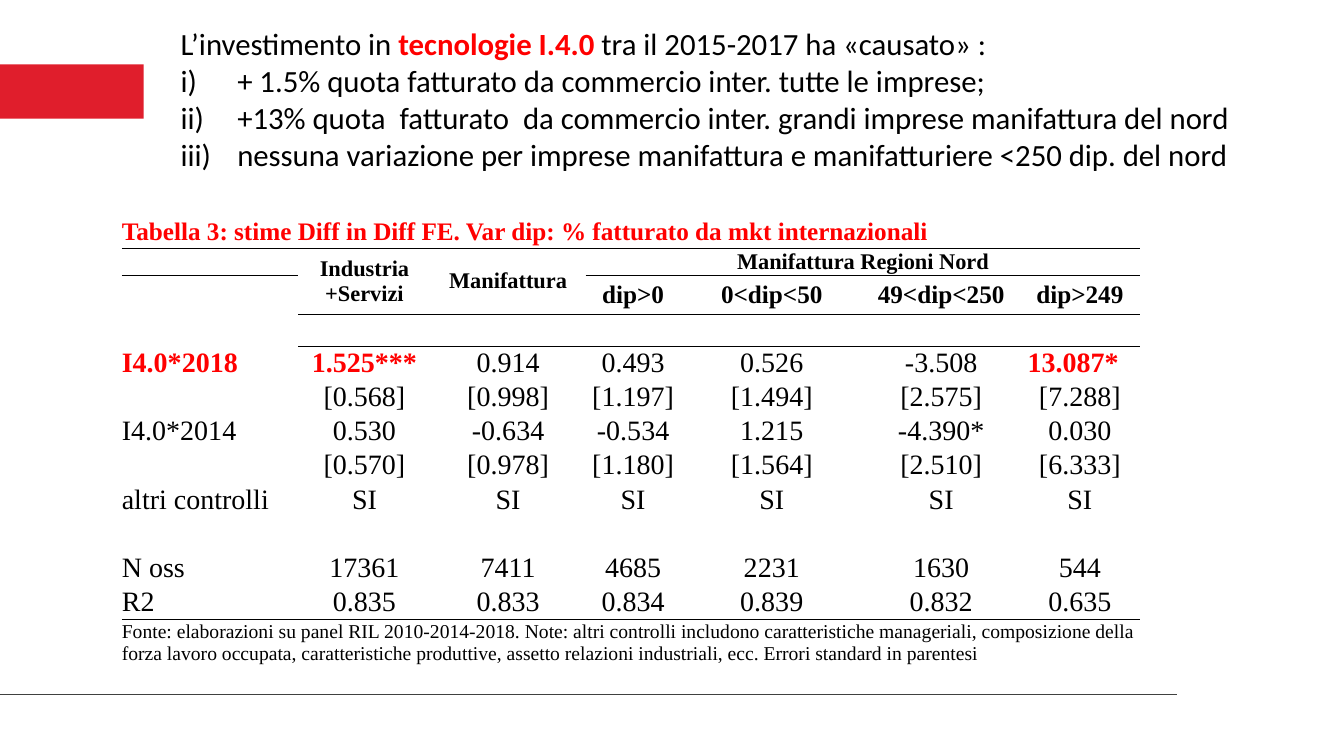
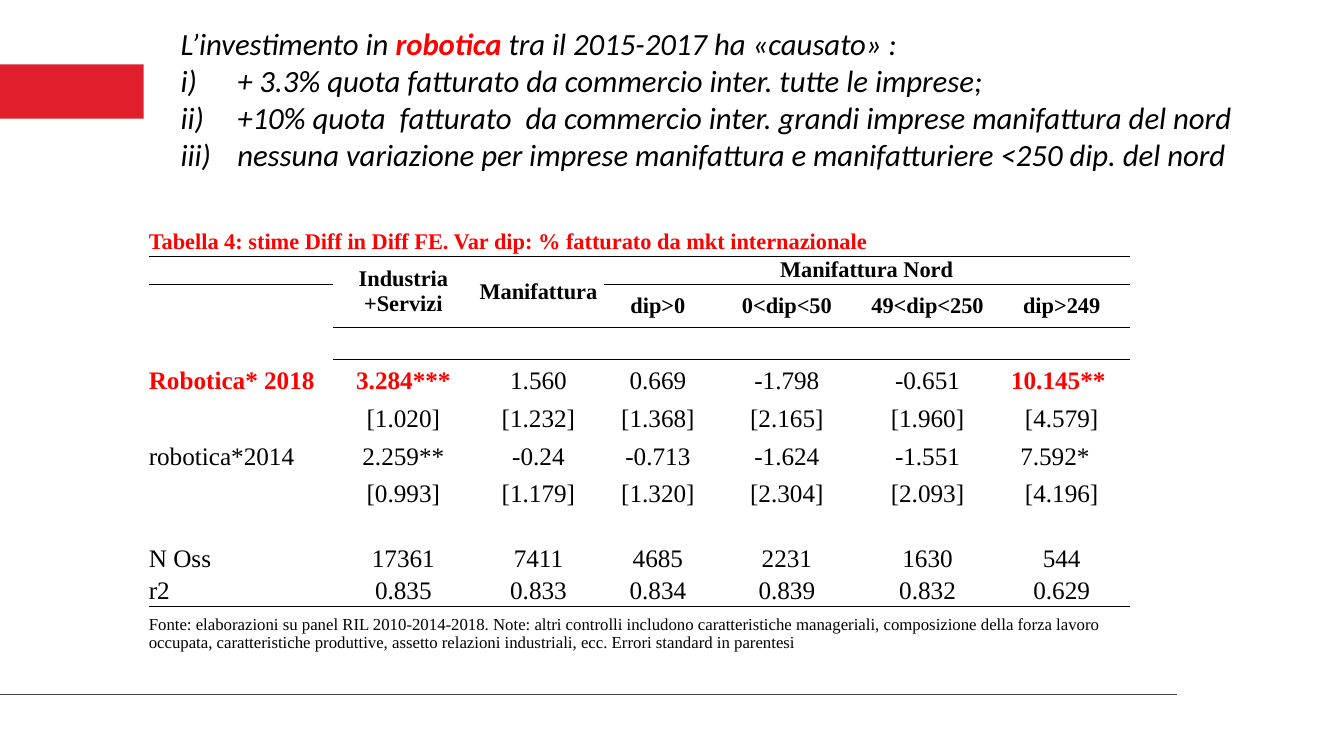
"""Builds two slides of Diff in Diff estimates on I.4.0 technologies and robotics."""
import lxml.etree
import pptx
import pptx.dml.color
import pptx.enum.shapes
import pptx.enum.text
import pptx.oxml.ns
import pptx.util

Cm, Pt, qn = pptx.util.Cm, pptx.util.Pt, pptx.oxml.ns.qn
ALIGN = pptx.enum.text.PP_ALIGN

NO_TABLE_STYLE = "{2D5ABB26-0587-4C30-8999-92F81FD0307C}"
SIZE_HEADERS = ["dip>0", "0<dip<50", "49<dip<250", "dip>249"]
OBSERVATIONS = ["17361", "7411", "4685", "2231", "1630", "544"]
CONTROLS = ["altri controlli"] + ["SI"] * 6
BLANK = [""] * 7
NOTE = ("Fonte: elaborazioni su panel RIL 2010-2014-2018. Note: altri controlli includono "
        "caratteristiche manageriali, composizione della forza lavoro occupata, caratteristiche "
        "produttive, assetto relazioni industriali, ecc. Errori standard in parentesi")


def colour(hex_string):
    """Return the colour object for a hex string."""
    return pptx.dml.color.RGBColor.from_string(hex_string)


def add_text(para, text, font, size, ink="000000", bold=False, italic=False):
    """Append one formatted span of text to a paragraph."""
    span = para.add_run()
    span.text = text
    span.font.name = font
    span.font.size = Pt(size)
    span.font.color.rgb = colour(ink)
    span.font.bold = bold
    span.font.italic = italic


class Report:
    """Holds the deck, its style and the current page."""

    BAND, LINE, ACCENT, INK = "E01E2C", "404140", "FF0000", "000000"
    HEADING_FONT, TABLE_FONT = "Calibri", "Times New Roman"
    HEADING_SIZE = 22

    def __init__(self):
        """Start an empty wide deck."""
        self.deck = pptx.Presentation()
        self.deck.slide_width = Cm(33.87)
        self.deck.slide_height = Cm(19.05)
        self.page = None

    def new_page(self):
        """Add a page with the red band and the bottom line."""
        self.page = self.deck.slides.add_slide(self.deck.slide_layouts[6])
        band = self.page.shapes.add_shape(
            pptx.enum.shapes.MSO_SHAPE.RECTANGLE, 0, Cm(1.62), Cm(3.62), Cm(1.37))
        band.shadow.inherit = False
        band.fill.solid()
        band.fill.fore_color.rgb = colour(self.BAND)
        band.line.fill.background()
        line = self.page.shapes.add_connector(
            pptx.enum.shapes.MSO_CONNECTOR.STRAIGHT, 0, Cm(17.5), Cm(29.65), Cm(17.5))
        line.line.color.rgb = colour(self.LINE)
        line.line.width = Pt(1)
        lxml.etree.SubElement(line._element.spPr, qn("a:effectLst"))

    def findings(self, technology, all_firms, large_firms, italic=False):
        """Write the lead sentence and its numbered findings."""
        box = self.page.shapes.add_textbox(Cm(4.3), Cm(0.5), Cm(27.28), Cm(4.02))
        frame = box.text_frame
        frame.word_wrap = True
        frame.auto_size = pptx.enum.text.MSO_AUTO_SIZE.SHAPE_TO_FIT_TEXT
        style = dict(font=self.HEADING_FONT, size=self.HEADING_SIZE, italic=italic)
        para = frame.paragraphs[0]
        para.alignment = ALIGN.JUSTIFY
        add_text(para, "L’investimento in ", **style)
        add_text(para, technology + " ", ink=self.ACCENT, bold=True, **style)
        add_text(para, "tra il 2015-2017 ha «causato» :", **style)
        for finding in (
                f"{all_firms} quota fatturato da commercio inter. tutte le imprese;",
                f"{large_firms} quota  fatturato  da commercio inter. grandi imprese "
                "manifattura del nord",
                "nessuna variazione per imprese manifattura e manifatturiere <250 dip. del nord"):
            para = frame.add_paragraph()
            para.alignment = ALIGN.JUSTIFY
            properties = para._p.get_or_add_pPr()
            properties.set("marL", str(Cm(1.43)))
            properties.set("indent", str(-Cm(1.43)))
            lxml.etree.SubElement(properties, qn("a:buAutoNum"), type="romanLcParenR")
            add_text(para, finding, **style)

    def fill_cell(self, cell, text, size, align=ALIGN.CENTER, **style):
        """Write one table cell."""
        para = cell.text_frame.paragraphs[0]
        para.alignment = align
        add_text(para, text, self.TABLE_FONT, size, **style)

    def rule(self, table, row, first_column=0):
        """Draw a thin line under a table row."""
        for column in range(first_column, len(table.columns)):
            for tag, line_row in (("a:lnB", row), ("a:lnT", row + 1)):
                properties = table.cell(line_row, column)._tc.get_or_add_tcPr()
                border = lxml.etree.SubElement(properties, qn(tag), w=str(Pt(0.5)))
                fill = lxml.etree.SubElement(border, qn("a:solidFill"))
                lxml.etree.SubElement(fill, qn("a:srgbClr"), val=self.INK)

    def estimates(self, left, top, widths, heights, caption, region, body, sizes):
        """Add a table of estimates with caption, headers and source note."""
        caption_size, header_size, class_size, body_size, note_size = sizes
        row_count, column_count = len(heights), len(widths)
        last = column_count - 1
        table = self.page.shapes.add_table(
            row_count, column_count, Cm(left), Cm(top),
            Cm(sum(widths)), Cm(sum(heights))).table
        table.first_row = table.horz_banding = False
        table._tbl.tblPr.find(qn("a:tableStyleId")).text = NO_TABLE_STYLE
        for column, width in zip(table.columns, widths):
            column.width = Cm(width)
        for row, height in zip(table.rows, heights):
            row.height = Cm(height)

        for row, first_column in ((0, 0), (1, 3), (2, 1), (row_count - 2, 0)):
            self.rule(table, row, first_column)
        for cell in table.iter_cells():
            cell.fill.background()
            cell.margin_left = cell.margin_right = cell.margin_top = cell.margin_bottom = 0
            cell.vertical_anchor = pptx.enum.text.MSO_ANCHOR.MIDDLE
            lxml.etree.SubElement(cell.text_frame.paragraphs[0]._p, qn("a:endParaRPr"), sz="1200")
        for start, end in (((0, 0), (0, last)), ((1, 1), (2, 1)), ((1, 2), (2, 2)),
                           ((1, 3), (1, last)), ((row_count - 1, 0), (row_count - 1, last))):
            table.cell(*start).merge(table.cell(*end))

        self.fill_cell(table.cell(0, 0), caption, caption_size, ALIGN.LEFT,
                       ink=self.ACCENT, bold=True)
        for column, header in enumerate(["Industria +Servizi", "Manifattura", region], 1):
            self.fill_cell(table.cell(1, column), header, header_size, bold=True)
        for column, header in enumerate(SIZE_HEADERS, 3):
            self.fill_cell(table.cell(2, column), header, class_size, bold=True)
        for row, values in enumerate(body, 4):
            for column, value in enumerate(values):
                if not value:
                    continue
                cell = table.cell(row, column)
                marked = row == 4 and column in (0, 1, last)
                stars = value.count("*")
                if column == last and stars:
                    cell.margin_right = Cm(0.17 * (3 - stars))
                self.fill_cell(cell, value, body_size, ALIGN.CENTER if column else ALIGN.LEFT,
                               ink=self.ACCENT if marked else self.INK, bold=marked)
        self.fill_cell(table.cell(row_count - 1, 0), NOTE, note_size, ALIGN.LEFT)


def main():
    """Build and save the deck."""
    report = Report()

    report.new_page()
    report.findings("tecnologie I.4.0", "+ 1.5%", "+13%")
    report.estimates(
        3.07, 5.46, [4.45, 3.33, 3.91, 2.39, 4.6, 3.94, 3.05],
        [0.79, 0.69, 0.99, 0.79] + [0.86] * 8 + [1.19],
        "Tabella 3: stime Diff in Diff FE. Var dip: % fatturato da mkt internazionali",
        "Manifattura Regioni Nord",
        [["I4.0*2018", "1.525***", "0.914", "0.493", "0.526", "-3.508", "13.087*"],
         ["", "[0.568]", "[0.998]", "[1.197]", "[1.494]", "[2.575]", "[7.288]"],
         ["I4.0*2014", "0.530", "-0.634", "-0.534", "1.215", "-4.390*", "0.030"],
         ["", "[0.570]", "[0.978]", "[1.180]", "[1.564]", "[2.510]", "[6.333]"],
         CONTROLS,
         BLANK,
         ["N oss"] + OBSERVATIONS,
         ["R2", "0.835", "0.833", "0.834", "0.839", "0.832", "0.635"]],
        sizes=(18, 16, 18, 20, 14))

    report.new_page()
    report.findings("robotica", "+ 3.3%", "+10%", italic=True)
    report.estimates(
        3.75, 5.74, [4.65, 3.53, 3.28, 2.74, 3.76, 3.33, 3.43],
        [0.71, 0.71, 1.09] + [0.81, 1.09] * 2 + [0.81] * 4 + [1.37],
        "Tabella 4: stime Diff in Diff FE. Var dip: % fatturato da mkt internazionale",
        "Manifattura Nord",
        [["Robotica* 2018", "3.284***", "1.560", "0.669", "-1.798", "-0.651", "10.145**"],
         ["", "[1.020]", "[1.232]", "[1.368]", "[2.165]", "[1.960]", "[4.579]"],
         ["robotica*2014", "2.259**", "-0.24", "-0.713", "-1.624", "-1.551", "7.592*"],
         ["", "[0.993]", "[1.179]", "[1.320]", "[2.304]", "[2.093]", "[4.196]"],
         BLANK,
         ["N Oss"] + OBSERVATIONS,
         ["r2", "0.835", "0.833", "0.834", "0.839", "0.832", "0.629"]],
        sizes=(16, 16, 16, 18, 12))

    report.deck.save("out.pptx")


if __name__ == "__main__":
    main()
